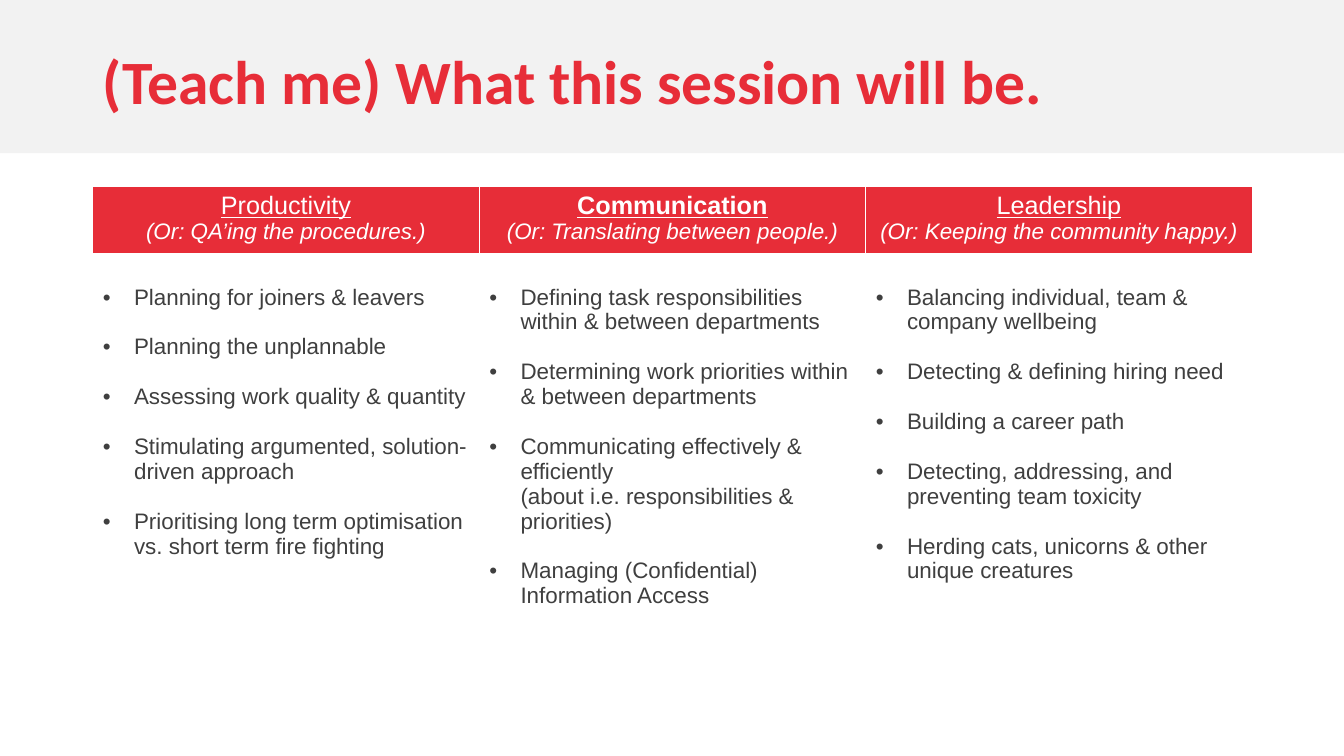
from lxml import etree
from pptx import Presentation
from pptx.dml.color import RGBColor
from pptx.enum.shapes import MSO_SHAPE
from pptx.enum.text import MSO_ANCHOR, MSO_AUTO_SIZE, PP_ALIGN
from pptx.oxml.ns import qn
from pptx.util import Inches, Pt

RECTANGLE = MSO_SHAPE.RECTANGLE
MIDDLE = MSO_ANCHOR.MIDDLE
NO_AUTOFIT = MSO_AUTO_SIZE.NONE
LEFT, CENTER = PP_ALIGN.LEFT, PP_ALIGN.CENTER

COLORS = {"red": "E72D38", "band": "F2F2F2", "text": "3F3F3F", "white": "FFFFFF"}
MARGIN, CONTENT_WIDTH = Inches(0.92), Inches(11.5)
ROW_HEIGHTS = [Inches(0.68), Inches(4.27)]
BULLET_INDENT = Inches(0.31)
BODY_SIZE, BULLET_GAP = 16, 17.8

TOPICS = [
    ("Productivity", "(Or: QA’ing the procedures.)", False, [
        "Planning for joiners & leavers",
        "Planning the unplannable",
        "Assessing work quality & quantity",
        "Stimulating argumented, solution-driven approach",
        "Prioritising long term optimisation vs. short term fire fighting",
    ]),
    ("Communication", "(Or: Translating between people.)", True, [
        "Defining task responsibilities within & between departments",
        "Determining work priorities within & between departments",
        "Communicating effectively & efficiently\n(about i.e. responsibilities & priorities)",
        "Managing (Confidential) Information Access",
    ]),
    ("Leadership", "(Or: Keeping the community happy.)", False, [
        "Balancing individual, team & company wellbeing",
        "Detecting & defining hiring need",
        "Building a career path",
        "Detecting, addressing, and preventing team toxicity",
        "Herding cats, unicorns & other unique creatures",
    ]),
]


def write(para, text, size=BODY_SIZE, color="text", font="Arial", bold=False,
          italic=False, underline=False, align=LEFT):
    para.text = text
    para.alignment = align
    for span in para.runs:
        span.font.name = font
        span.font.size = Pt(size)
        span.font.bold = bold
        span.font.italic = italic
        span.font.underline = underline
        span.font.color.rgb = RGBColor.from_string(COLORS[color])
    for line_break in para._p.findall(qn("a:br")):
        etree.SubElement(line_break, qn("a:rPr")).set("sz", str(size * 100))


deck = Presentation()
deck.slide_width, deck.slide_height = Inches(13.33), Inches(7.5)
page = deck.slides.add_slide(deck.slide_layouts[5])

band = page.shapes.add_shape(RECTANGLE, 0, 0, deck.slide_width, Inches(1.52))
band.shadow.inherit = False
band.fill.solid()
band.fill.fore_color.rgb = RGBColor.from_string(COLORS["band"])
band.line.fill.background()
page.shapes._spTree.insert(2, band._element)

title = page.shapes.title
title.left, title.top = MARGIN, Inches(0.11)
title.width, title.height = CONTENT_WIDTH, Inches(1.45)
title.text_frame.vertical_anchor = MIDDLE
title.text_frame.auto_size = NO_AUTOFIT
heading = title.text_frame.paragraphs[0]
write(heading, "(Teach me) What this session will be.", size=44, color="red",
      font="Calibri", bold=True)
heading.line_spacing = 0.9

table = page.shapes.add_table(len(ROW_HEIGHTS), len(TOPICS), MARGIN, Inches(1.85),
                              CONTENT_WIDTH, sum(ROW_HEIGHTS)).table
table.horz_banding = False
for row, height in zip(table.rows, ROW_HEIGHTS):
    row.height = height

for row_index, fill in enumerate(["red", "white"]):
    for column in range(len(TOPICS)):
        cell = table.cell(row_index, column)
        cell_format = cell._tc.get_or_add_tcPr()
        for side in ("L", "R", "T", "B"):
            at_header_edge = (row_index, side) in [(0, "B"), (1, "T")]
            border = etree.SubElement(cell_format, qn(f"a:ln{side}"))
            border.set("w", str(Pt(3 if at_header_edge else 1)))
            solid = etree.SubElement(border, qn("a:solidFill"))
            etree.SubElement(solid, qn("a:srgbClr")).set("val", COLORS["white"])
        cell.fill.solid()
        cell.fill.fore_color.rgb = RGBColor.from_string(COLORS[fill])

for column, (name, subtitle, emphasised, points) in enumerate(TOPICS):
    header = table.cell(0, column).text_frame
    write(header.paragraphs[0], name, size=18, color="white", bold=emphasised,
          underline=True, align=CENTER)
    write(header.add_paragraph(), subtitle, color="white", italic=True, align=CENTER)

    body = table.cell(1, column)
    body.margin_top = Inches(0.05) + Pt(BULLET_GAP)
    for index, point in enumerate(points):
        para = body.text_frame.add_paragraph() if index else body.text_frame.paragraphs[0]
        write(para, point)
        if index:
            para.space_before = Pt(BULLET_GAP)
        para_format = para._p.get_or_add_pPr()
        para_format.set("marL", str(BULLET_INDENT))
        para_format.set("indent", str(-BULLET_INDENT))
        bullet_color = etree.SubElement(para_format, qn("a:buClr"))
        etree.SubElement(bullet_color, qn("a:srgbClr")).set("val", COLORS["text"])
        etree.SubElement(para_format, qn("a:buFont")).set("typeface", "Arial")
        etree.SubElement(para_format, qn("a:buChar")).set("char", "•")

deck.save("out.pptx")
